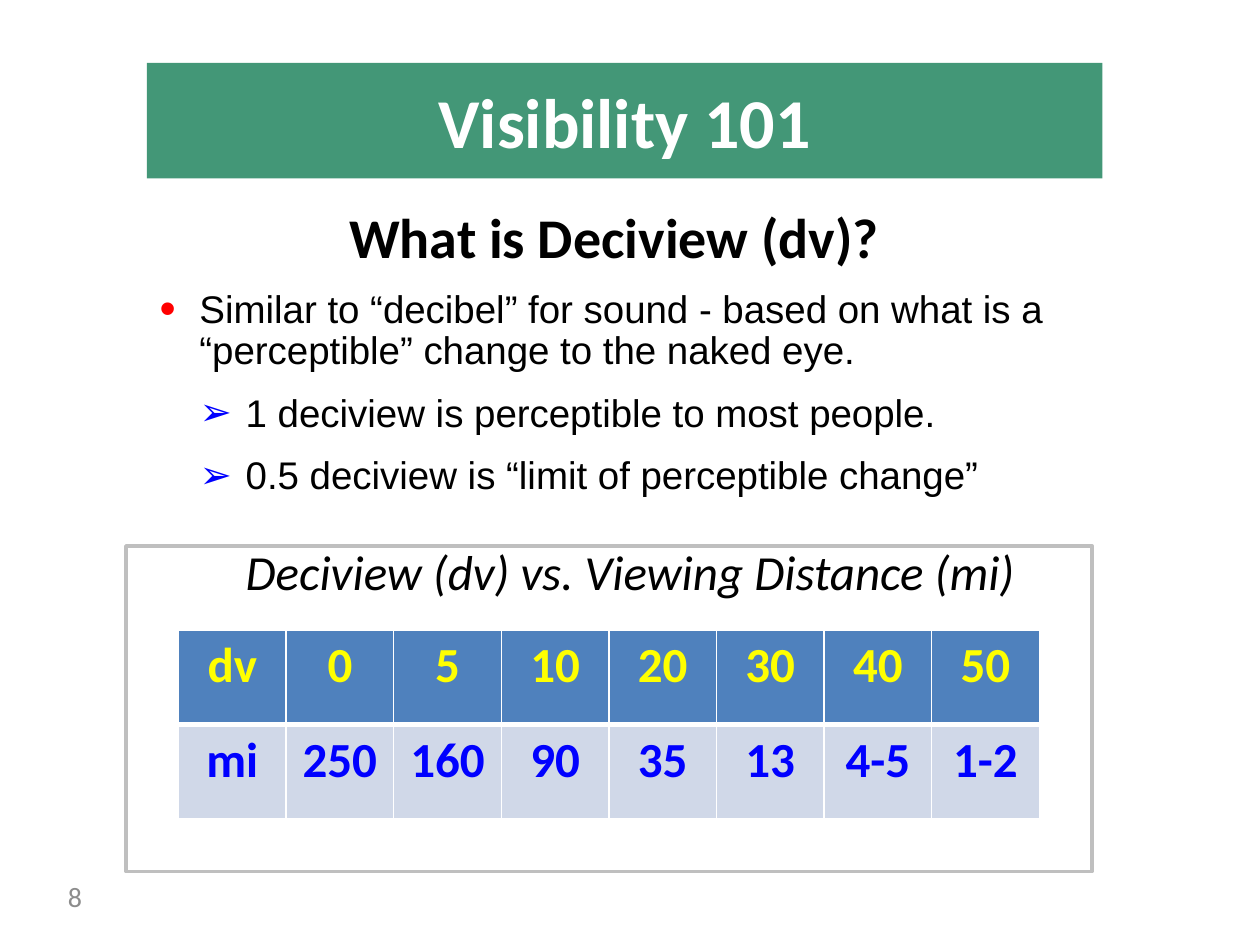
from lxml import etree
from pptx import Presentation
from pptx import util as u
from pptx.dml.color import RGBColor
from pptx.enum import shapes, text
from pptx.oxml import ns

PX = 7620  # 120 px to the inch
BLACK = RGBColor(0x00, 0x00, 0x00)
WHITE = RGBColor(0xFF, 0xFF, 0xFF)
GREEN = RGBColor(0x43, 0x97, 0x77)
RED = RGBColor(0xFF, 0x00, 0x00)
BLUE = RGBColor(0x00, 0x00, 0xFF)
YELLOW = RGBColor(0xFF, 0xFF, 0x00)
STEEL = RGBColor(0x4F, 0x81, 0xBD)
PALE = RGBColor(0xD0, 0xD8, 0xE8)
SILVER = RGBColor(0xBF, 0xBF, 0xBF)
GRAY = RGBColor(0x8C, 0x8C, 0x8C)

CENTER = text.PP_ALIGN.CENTER
MIDDLE = text.MSO_ANCHOR.MIDDLE
TOP = text.MSO_ANCHOR.TOP

POINTS = [
    (0, "Similar to “decibel” for sound - based on what is a "
        "“perceptible” change to the naked eye."),
    (1, "1 deciview is perceptible to most people."),
    (1, "0.5 deciview is “limit of perceptible change”"),
]
# per level: mark, colour, size in percent, left edge and hang in px
MARKS = [("•", RED, 120, 38, 38), ("➢", BLUE, 100, 82, 44)]

# row values, text colour, fill, bottom border in points
ROWS = [
    (["dv", "0", "5", "10", "20", "30", "40", "50"], YELLOW, STEEL, 3),
    (["mi", "250", "160", "90", "35", "13", "4-5", "1-2"], BLUE, PALE, 1),
]


def emu(box):
    return [n * PX for n in box]


def place(shape, box):
    shape.left, shape.top, shape.width, shape.height = emu(box)


def add(elem, tag, **attrs):
    """Append a DrawingML child element."""
    child = etree.SubElement(elem, ns.qn("a:" + tag))
    for key, val in attrs.items():
        child.set(key, str(val))
    return child


def write(para, words, size, color, font="Calibri", bold=False, ital=False):
    run = para.add_run()
    run.text = words
    face = run.font
    face.name, face.size = font, u.Pt(size)
    face.bold, face.italic = bold, ital
    face.color.rgb = color


def setup(frame, anchor):
    frame.word_wrap = True
    frame.auto_size = text.MSO_AUTO_SIZE.NONE
    frame.vertical_anchor = anchor


def label(slide, box, words, size, color, align, anchor, ital=False):
    frame = slide.shapes.add_textbox(*emu(box)).text_frame
    setup(frame, anchor)
    para = frame.paragraphs[0]
    para.alignment = align
    write(para, words, size, color, ital=ital)


def rect(slide, box):
    shape = slide.shapes.add_shape(shapes.MSO_SHAPE.RECTANGLE, *emu(box))
    shape.shadow.inherit = False
    return shape


def banner(slide, box):
    shape = rect(slide, box)
    shape.fill.solid()
    shape.fill.fore_color.rgb = GREEN
    shape.line.fill.background()
    setup(shape.text_frame, MIDDLE)
    para = shape.text_frame.paragraphs[0]
    para.alignment = CENTER
    write(para, "Visibility 101", 40, WHITE, bold=True)


def title(slide, box):
    shape = slide.shapes.title
    place(shape, box)
    setup(shape.text_frame, MIDDLE)
    para = shape.text_frame.paragraphs[0]
    para.alignment = CENTER
    write(para, "What is Deciview (dv)?", 32, BLACK, bold=True)


def bullet(para, mark, color, size, left, hang):
    props = para._p.get_or_add_pPr()
    props.set("marL", str(left * PX))
    props.set("indent", str(-hang * PX))
    add(add(props, "buClr"), "srgbClr", val=color)
    add(props, "buSzPct", val=size * 1000)
    add(props, "buFont", typeface="Arial")
    add(props, "buChar", char=mark)


def body(slide, box):
    shape = slide.placeholders[1]
    place(shape, box)
    frame = shape.text_frame
    setup(frame, TOP)
    for i, (level, words) in enumerate(POINTS):
        para = frame.add_paragraph() if i else frame.paragraphs[0]
        para.level = level
        bullet(para, *MARKS[level])
        para.line_spacing = 0.9
        para.space_before = u.Pt(6 if i else 0)
        para.space_after = u.Pt(6)
        write(para, words, 22, BLACK, "Arial")


def border(cell, base):
    props = cell._tc.get_or_add_tcPr()
    for side, wide in zip("LRTB", (1, 1, 1, base)):
        line = add(props, "ln" + side, w=u.Pt(wide))
        add(add(line, "solidFill"), "srgbClr", val=WHITE)


def grid(slide, box):
    count = len(ROWS[0][0])
    table = slide.shapes.add_table(len(ROWS), count, *emu(box)).table
    for r, (vals, color, fill, base) in enumerate(ROWS):
        for c, val in enumerate(vals):
            cell = table.cell(r, c)
            border(cell, base)
            cell.fill.solid()
            cell.fill.fore_color.rgb = fill
            para = cell.text_frame.paragraphs[0]
            para.alignment = CENTER
            write(para, val, 28, color, bold=True)


def panel(slide, box):
    """Framed table with its caption."""
    x, y, w, h = box
    label(slide, (x + 30, y - 10, w - 20, 100),
          "Deciview (dv) vs. Viewing Distance (mi)", 28, BLACK,
          CENTER, TOP, ital=True)
    grid(slide, (x + 50, y + 80, w - 100, 180))
    frame = rect(slide, box)
    frame.fill.background()
    frame.line.color.rgb = SILVER
    frame.line.width = u.Pt(2)


def main():
    deck = Presentation()
    deck.slide_width, deck.slide_height = emu((1200, 900))
    slide = deck.slides.add_slide(deck.slide_layouts[1])
    title(slide, (100, 170, 970, 110))
    banner(slide, (140, 60, 910, 110))
    body(slide, (140, 270, 900, 230))
    panel(slide, (120, 520, 920, 310))
    label(slide, (10, 830, 80, 48), "8", 16, GRAY,
          text.PP_ALIGN.RIGHT, MIDDLE)
    deck.save("out.pptx")


if __name__ == "__main__":
    main()
